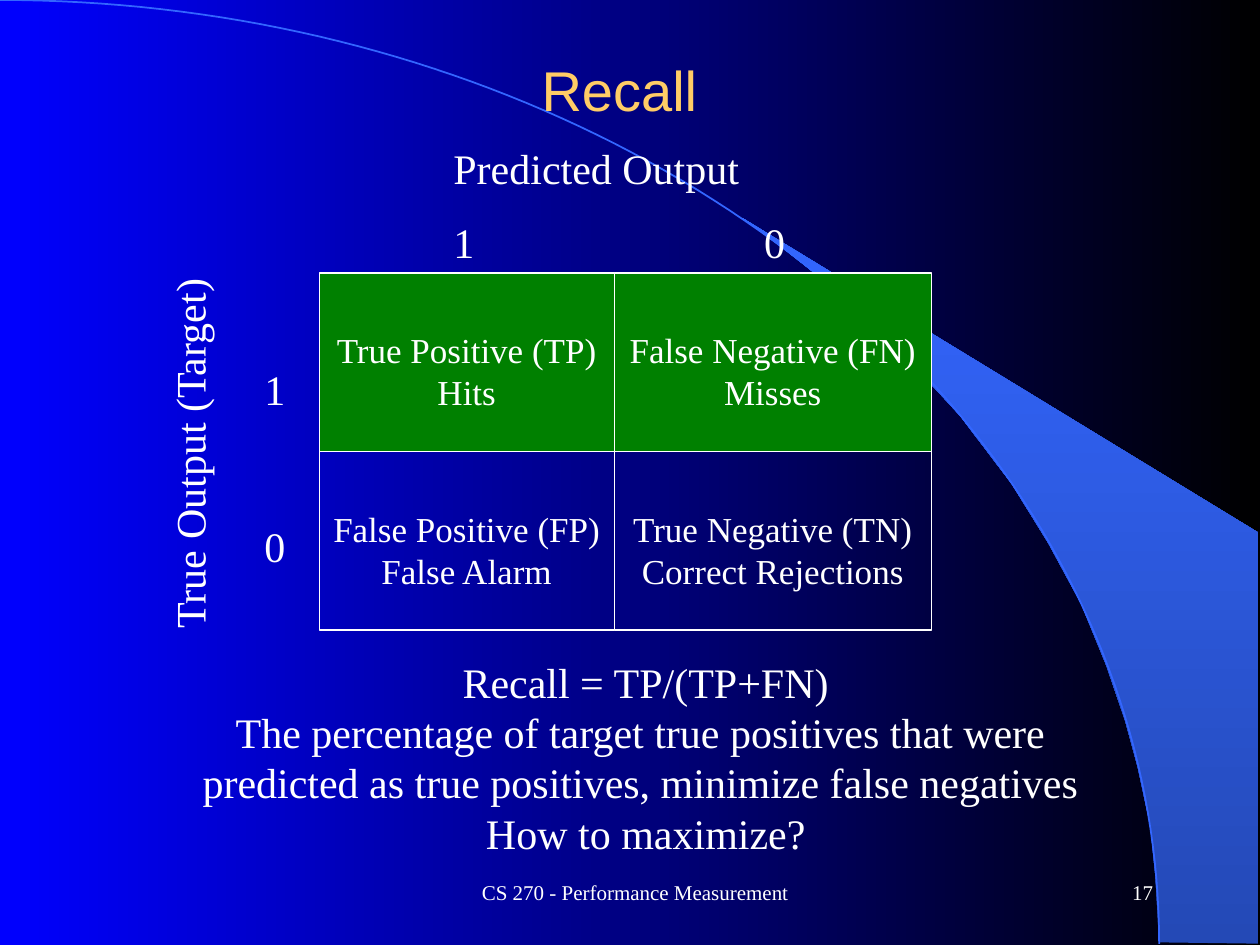
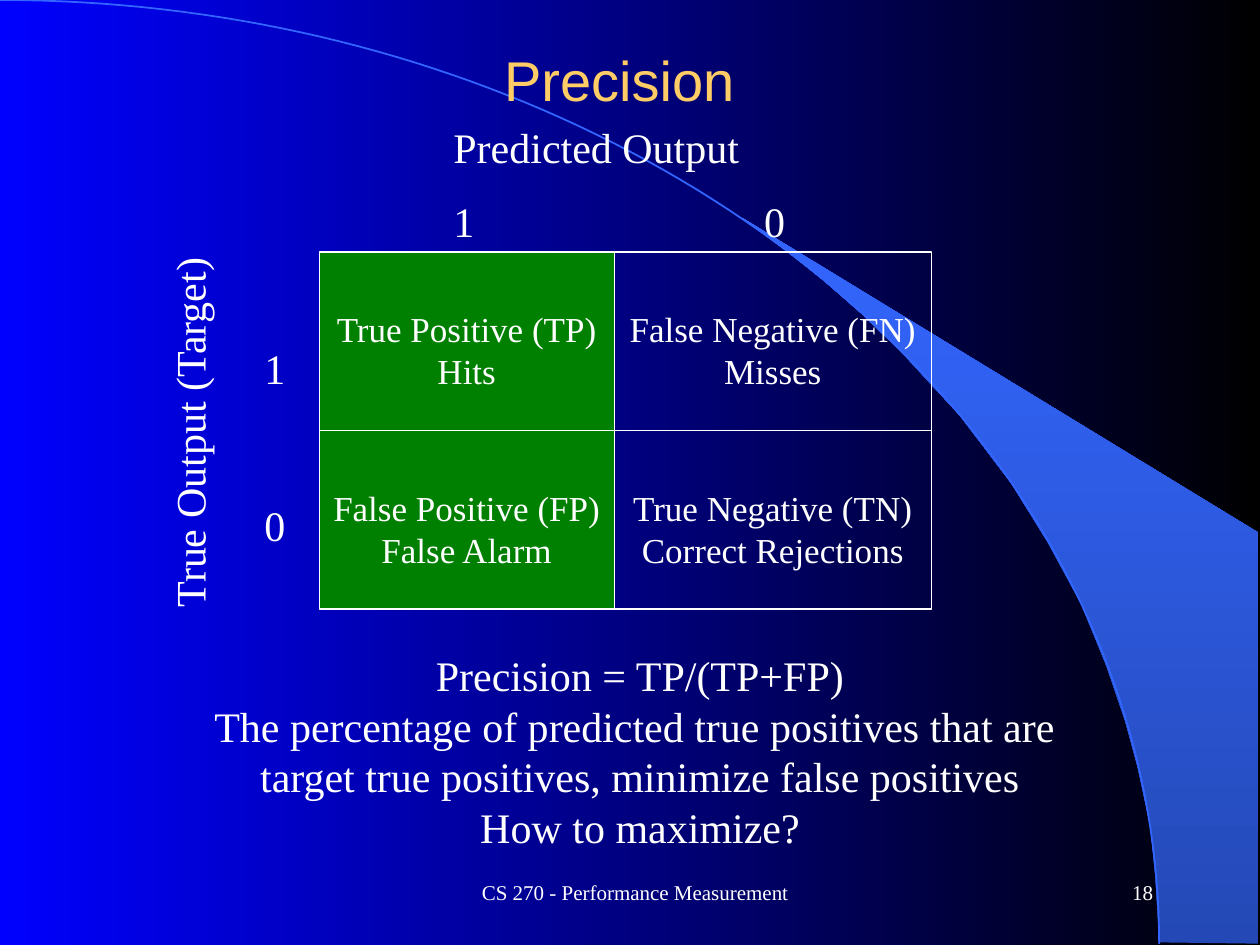
import math
from dataclasses import dataclass
from typing import NamedTuple

from pptx import Presentation
from pptx.dml.color import RGBColor
from pptx.enum.shapes import MSO_SHAPE
from pptx.enum.text import MSO_ANCHOR, MSO_AUTO_SIZE, PP_ALIGN
from pptx.util import Emu, Inches, Pt

RECT = MSO_SHAPE.RECTANGLE
LEFT, CENTER, RIGHT = PP_ALIGN.LEFT, PP_ALIGN.CENTER, PP_ALIGN.RIGHT
TOP, MIDDLE = MSO_ANCHOR.TOP, MSO_ANCHOR.MIDDLE
GROW, FIXED = MSO_AUTO_SIZE.SHAPE_TO_FIT_TEXT, MSO_AUTO_SIZE.NONE
TITLE_ONLY = 5
GRID_COLS, GRID_ROWS = 120, 90
WIDTH, HEIGHT = Inches(10), Inches(7.5)


@dataclass(frozen=True)
class Theme:
    back: tuple[str, str] = ("0000FF", "000000")
    wedge: tuple[str, str] = ("2449B6", "3366FF")
    arc: str = "3366FF"
    highlight: str = "008000"
    text: str = "FFFFFF"
    title: str = "FFCC66"
    title_font: str = "Arial"
    text_font: str = "Times New Roman"
    title_size: int = 32
    label_size: int = 24
    cell_size: int = 20
    footer_size: int = 12


class Box(NamedTuple):
    col: float
    row: float
    cols: float
    rows: float

    def place(self) -> tuple[Emu, Emu, Emu, Emu]:
        return (
            Emu(round(self.col * WIDTH / GRID_COLS)),
            Emu(round(self.row * HEIGHT / GRID_ROWS)),
            Emu(round(self.cols * WIDTH / GRID_COLS)),
            Emu(round(self.rows * HEIGHT / GRID_ROWS)),
        )


class Label(NamedTuple):
    text: str
    box: Box
    rotation: int = 0


class Cell(NamedTuple):
    name: str
    meaning: str
    col: int
    row: int


@dataclass(frozen=True)
class Measure:
    title: str
    number: int
    title_row: float
    matrix_row: float
    highlighted: tuple[str, str]
    body: Box
    lines: tuple[str, ...]


THEME = Theme()
COL_EDGES = (30.4, 58.5, 88.7)
CELL_ROWS = 17
CELL_TEXT_ROW = 4.7
FOOTER = "CS 270 - Performance Measurement"

AXIS_LABELS = (
    Label("Predicted Output", Box(42, -13, 29.6, 6)),
    Label("True Output (Target)", Box(0, 14, 36, 6), 270),
    Label("1", Box(42, -6, 4.4, 6)),
    Label("0", Box(71.6, -6, 4.4, 6)),
    Label("1", Box(24, 8, 4.4, 6)),
    Label("0", Box(24, 23, 4.4, 6)),
)
CELLS = (
    Cell("True Positive (TP)", "Hits", 0, 0),
    Cell("False Negative (FN)", "Misses", 1, 0),
    Cell("False Positive (FP)", "False Alarm", 0, 1),
    Cell("True Negative (TN)", "Correct Rejections", 1, 1),
)
WEDGE = (
    (9.2, 7.48), (9.99, 7.49), (9.99, 4.23), (5.89, 1.73), (6.24, 1.99),
    (6.53, 2.22), (6.85, 2.5), (7.16, 2.8), (7.62, 3.3), (8.03, 3.84),
    (8.32, 4.31), (8.58, 4.79), (8.78, 5.28), (8.93, 5.72), (9.03, 6.09),
    (9.13, 6.56), (9.17, 6.96),
)
ARC_WIDTH, ARC_HEIGHT, ARC_STEPS = 9.2, 7.49, 90
ARC = tuple(
    (ARC_WIDTH * math.sin(a), ARC_HEIGHT * (1 - math.cos(a)))
    for a in (math.pi / 2 * i / ARC_STEPS for i in range(ARC_STEPS + 1))
)
MEASURES = (
    Measure(
        "Recall", 17, 3, 26, ("True Positive (TP)", "False Negative (FN)"),
        Box(15, 61.9, 93, 20.6),
        (
            "Recall = TP/(TP+FN)",
            "The percentage of target true positives that were ",
            "predicted as true positives, minimize false negatives ",
            "How to maximize?",
        ),
    ),
    Measure(
        "Precision", 18, 2, 24, ("True Positive (TP)", "False Positive (FP)"),
        Box(18.9, 61.3, 84.1, 20.6),
        (
            "Precision = TP/(TP+FP)",
            "The percentage of predicted true positives that are ",
            "target true positives, minimize false positives",
            "How to maximize?",
        ),
    ),
)


def set_all(target, values: dict) -> None:
    for name, value in values.items():
        setattr(target, name, value)


def fill_gradient(fill, colors: tuple[str, str]) -> None:
    fill.gradient()
    for stop, color in zip(fill.gradient_stops, colors):
        stop.color.rgb = RGBColor.from_string(color)


def write(tf, lines: tuple[str, ...], size: int, align=LEFT, anchor=TOP,
          grow=GROW, wrap: bool = False, font: str = THEME.text_font,
          color: str = THEME.text) -> None:
    set_all(tf, {"word_wrap": wrap, "auto_size": grow, "vertical_anchor": anchor})
    for i, line in enumerate(lines):
        p = tf.add_paragraph() if i else tf.paragraphs[0]
        p.alignment = align
        r = p.add_run()
        r.text = line
        set_all(r.font, {"name": font, "size": Pt(size)})
        r.font.color.rgb = RGBColor.from_string(color)


def add_text(s, box: Box, lines: tuple[str, ...], size: int,
             rotation: int = 0, **style) -> None:
    sp = s.shapes.add_textbox(*box.place())
    sp.rotation = rotation
    write(sp.text_frame, lines, size, **style)


def add_outline(s, points: tuple[tuple[float, float], ...], close: bool):
    start, *rest = [(Inches(x), Inches(y)) for x, y in points]
    builder = s.shapes.build_freeform(*start)
    builder.add_line_segments(rest, close=close)
    sp = builder.convert_to_shape()
    sp.shadow.inherit = False
    return sp


def add_backdrop(s) -> None:
    fill_gradient(s.background.fill, THEME.back)
    wedge = add_outline(s, WEDGE, True)
    fill_gradient(wedge.fill, THEME.wedge)
    wedge.line.fill.background()
    arc = add_outline(s, ARC, False)
    arc.fill.background()
    arc.line.color.rgb = RGBColor.from_string(THEME.arc)
    arc.line.width = Pt(1)


def add_title(s, m: Measure) -> None:
    sp = s.shapes.title
    s.shapes.element.append(sp.element)
    places = Box(8, m.title_row, 102, 11).place()
    set_all(sp, dict(zip(("left", "top", "width", "height"), places)))
    write(sp.text_frame, (m.title,), THEME.title_size, CENTER, MIDDLE, FIXED,
          True, THEME.title_font, THEME.title)


def add_cell(s, cell: Cell, m: Measure) -> None:
    left, right = COL_EDGES[cell.col:cell.col + 2]
    box = Box(left, m.matrix_row + cell.row * CELL_ROWS, right - left, CELL_ROWS)
    sp = s.shapes.add_shape(RECT, *box.place())
    sp.shadow.inherit = False
    sp.line.color.rgb = RGBColor.from_string(THEME.text)
    sp.line.width = Pt(0.75)
    if cell.name in m.highlighted:
        sp.fill.solid()
        sp.fill.fore_color.rgb = RGBColor.from_string(THEME.highlight)
    else:
        sp.fill.background()
    add_text(s, box._replace(row=box.row + CELL_TEXT_ROW, rows=9.2),
             (cell.name, cell.meaning), THEME.cell_size, align=CENTER)


def add_footer(s, number: int) -> None:
    for box, text, align in (
        (Box(38, 82, 45, 6), FOOTER, CENTER),
        (Box(86, 82, 25, 6), str(number), RIGHT),
    ):
        add_text(s, box, (text,), THEME.footer_size, align=align,
                 anchor=MIDDLE, grow=FIXED, wrap=True)


def add_measure(prs, m: Measure) -> None:
    s = prs.slides.add_slide(prs.slide_layouts[TITLE_ONLY])
    add_backdrop(s)
    add_title(s, m)
    for label in AXIS_LABELS:
        box = label.box._replace(row=m.matrix_row + label.box.row)
        add_text(s, box, (label.text,), THEME.label_size, label.rotation)
    for cell in CELLS:
        add_cell(s, cell, m)
    add_text(s, m.body, m.lines, THEME.label_size, align=CENTER)
    add_footer(s, m.number)


def main() -> None:
    prs = Presentation()
    set_all(prs, {"slide_width": WIDTH, "slide_height": HEIGHT})
    for m in MEASURES:
        add_measure(prs, m)
    prs.save("out.pptx")


if __name__ == "__main__":
    main()
